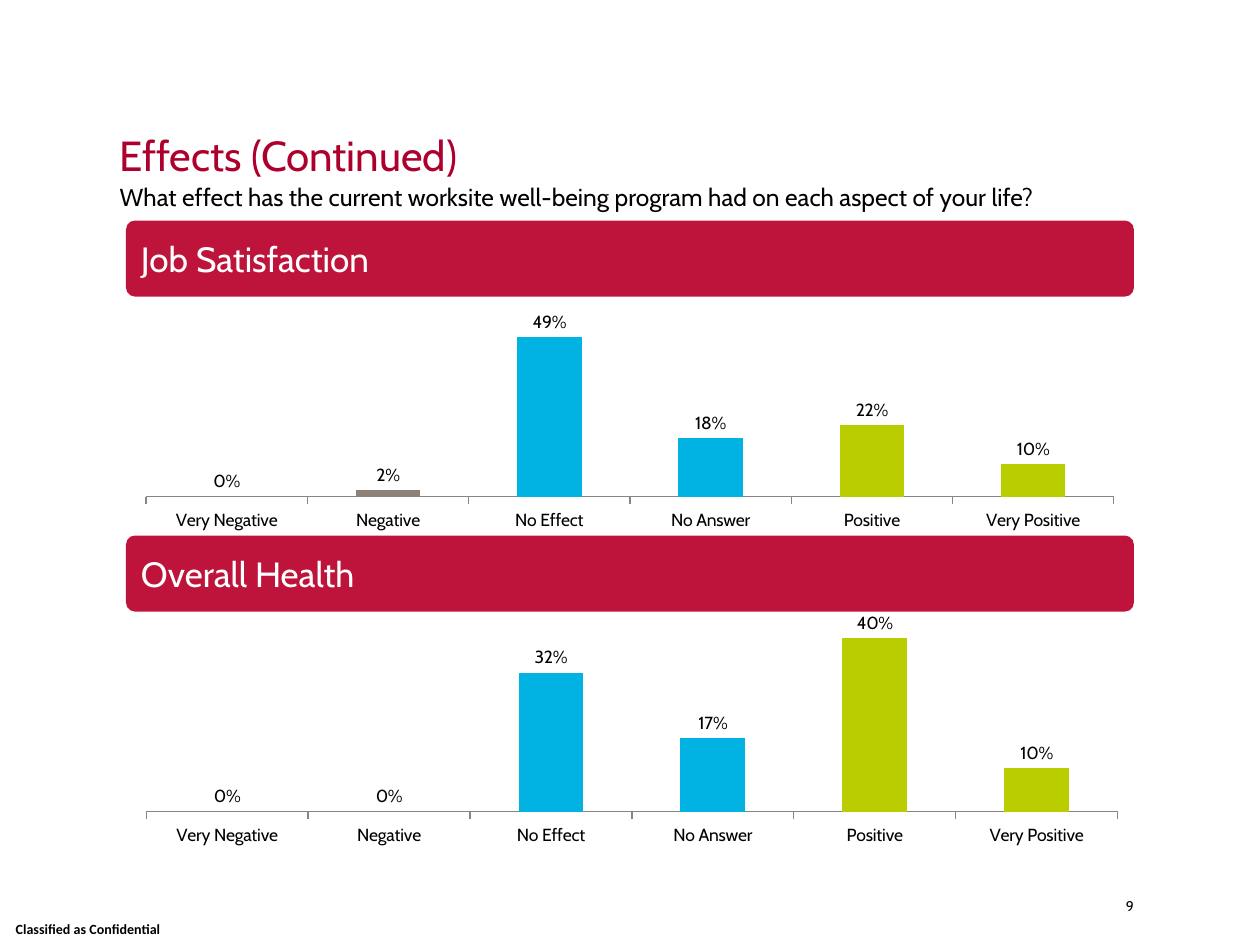
from pptx import Presentation
from pptx.chart.data import CategoryChartData
from pptx.dml.color import RGBColor
from pptx.enum.chart import XL_CHART_TYPE, XL_LABEL_POSITION, XL_TICK_MARK
from pptx.enum.shapes import MSO_SHAPE
from pptx.enum.text import MSO_ANCHOR, MSO_AUTO_SIZE, PP_ALIGN
from pptx.util import Pt

TITLE = "Effects (Continued)"
QUESTION = ("What effect has the current worksite well-being program "
            "had on each aspect of your life?")
PAGE_NUMBER = "9"
CLASSIFICATION = "Classified as Confidential"
ANSWERS = [
    ("Very Negative", "negative"),
    ("Negative", "negative"),
    ("No Effect", "neutral"),
    ("No Answer", "neutral"),
    ("Positive", "positive"),
    ("Very Positive", "positive"),
]
SECTIONS = [
    {"heading": "Job Satisfaction", "shares": (0, 0.02, 0.49, 0.18, 0.22, 0.1),
     "axis_max": 0.6, "chart_width": 576},
    {"heading": "Overall Health", "shares": (0, 0, 0.32, 0.17, 0.4, 0.1),
     "axis_max": 0.45, "chart_width": 578.2},
]

THEME = {
    "font": "Cabin",
    "footer_font": "Calibri",
    "colors": {"title": "AE002C", "text": "000000", "banner": "BE143C",
               "on_banner": "FFFFFF", "axis": "868686", "negative": "8D827A",
               "neutral": "00B3E3", "positive": "B9CD00"},
    "sizes": {"title": 24, "heading": 20, "question": 14, "chart": 10, "small": 8},
}

MARGIN = 72
BANNER_WIDTH, BANNER_HEIGHT = 576, 43.5
CHART_HEIGHT = 136.2
FIRST_SECTION_TOP, SECTION_PITCH = 126, 180


def color(role):
    return RGBColor.from_string(THEME["colors"][role])


def write(shape, text, *, size, ink="text", font=THEME["font"], bold=False,
          align=PP_ALIGN.LEFT, anchor=MSO_ANCHOR.TOP, inset=0,
          line_spacing=1.0, before=0, after=0):
    frame = shape.text_frame
    frame.word_wrap = True
    frame.auto_size = MSO_AUTO_SIZE.NONE
    frame.vertical_anchor = anchor
    frame.margin_left = frame.margin_right = Pt(inset)
    frame.margin_top = frame.margin_bottom = Pt(inset / 2)
    paragraph = frame.paragraphs[0]
    paragraph.alignment = align
    paragraph.line_spacing = line_spacing
    paragraph.space_before, paragraph.space_after = Pt(before), Pt(after)
    run = paragraph.add_run()
    run.text = text
    run.font.name = font
    run.font.size = Pt(THEME["sizes"][size])
    run.font.bold = bold
    run.font.color.rgb = color(ink)


def add_label(slide, text, box, **text_format):
    write(slide.shapes.add_textbox(*map(Pt, box)), text, **text_format)


def add_banner(slide, heading, top):
    banner = slide.shapes.add_shape(
        MSO_SHAPE.ROUNDED_RECTANGLE, Pt(MARGIN), Pt(top),
        Pt(BANNER_WIDTH), Pt(BANNER_HEIGHT))
    banner.adjustments[0] = 0.12
    banner.shadow.inherit = False
    banner.fill.solid()
    banner.fill.fore_color.rgb = color("banner")
    banner.line.fill.background()
    write(banner, heading, size="heading", ink="on_banner", inset=7.2,
          anchor=MSO_ANCHOR.MIDDLE, before=8, after=9)


def add_share_chart(slide, section, top):
    data = CategoryChartData(number_format="0%")
    data.categories = [answer for answer, _ in ANSWERS]
    data.add_series("Series 1", section["shares"])
    chart = slide.shapes.add_chart(
        XL_CHART_TYPE.COLUMN_CLUSTERED, Pt(MARGIN), Pt(top),
        Pt(section["chart_width"]), Pt(CHART_HEIGHT), data).chart
    chart.has_legend = chart.has_title = False
    chart.font.name = THEME["font"]
    chart.font.size = Pt(THEME["sizes"]["chart"])
    chart.font.color.rgb = color("text")

    share_axis = chart.value_axis
    share_axis.visible = share_axis.has_major_gridlines = False
    share_axis.minimum_scale, share_axis.maximum_scale = 0, section["axis_max"]
    answer_axis = chart.category_axis
    answer_axis.major_tick_mark = XL_TICK_MARK.OUTSIDE
    answer_axis.format.line.color.rgb = color("axis")
    answer_axis.format.line.width = Pt(0.75)

    plot = chart.plots[0]
    plot.gap_width = 150
    plot.vary_by_categories = False
    plot.has_data_labels = True
    labels = plot.data_labels
    labels.show_value = True
    labels.number_format, labels.number_format_is_linked = "0%", False
    labels.position = XL_LABEL_POSITION.OUTSIDE_END

    series = plot.series[0]
    series.format.fill.solid()
    series.format.fill.fore_color.rgb = color("banner")
    for index, (_, tone) in enumerate(ANSWERS):
        column_fill = series.points[index].format.fill
        column_fill.solid()
        column_fill.fore_color.rgb = color(tone)


def main():
    deck = Presentation()
    deck.slide_width, deck.slide_height = Pt(720), Pt(540)
    slide = deck.slides.add_slide(deck.slide_layouts[5])

    title = slide.shapes.title
    title.left, title.top, title.width, title.height = map(Pt, (68.4, 49, 576, 54))
    write(title, TITLE, size="title", ink="title",
          anchor=MSO_ANCHOR.BOTTOM, line_spacing=0.9)
    add_label(slide, QUESTION, (68.4, 100.8, 597, 21.6), size="question",
              line_spacing=1.2, before=9, after=9)

    for index, section in enumerate(SECTIONS):
        top = FIRST_SECTION_TOP + index * SECTION_PITCH
        add_banner(slide, section["heading"], top)
        add_share_chart(slide, section, top + BANNER_HEIGHT)

    add_label(slide, PAGE_NUMBER, (612.7, 512.6, 35.3, 27.4), size="small",
              align=PP_ALIGN.RIGHT)
    add_label(slide, CLASSIFICATION, (0, 522, 100.8, 18), size="small",
              font=THEME["footer_font"], bold=True, align=PP_ALIGN.CENTER,
              anchor=MSO_ANCHOR.MIDDLE)
    deck.save("out.pptx")


if __name__ == "__main__":
    main()
